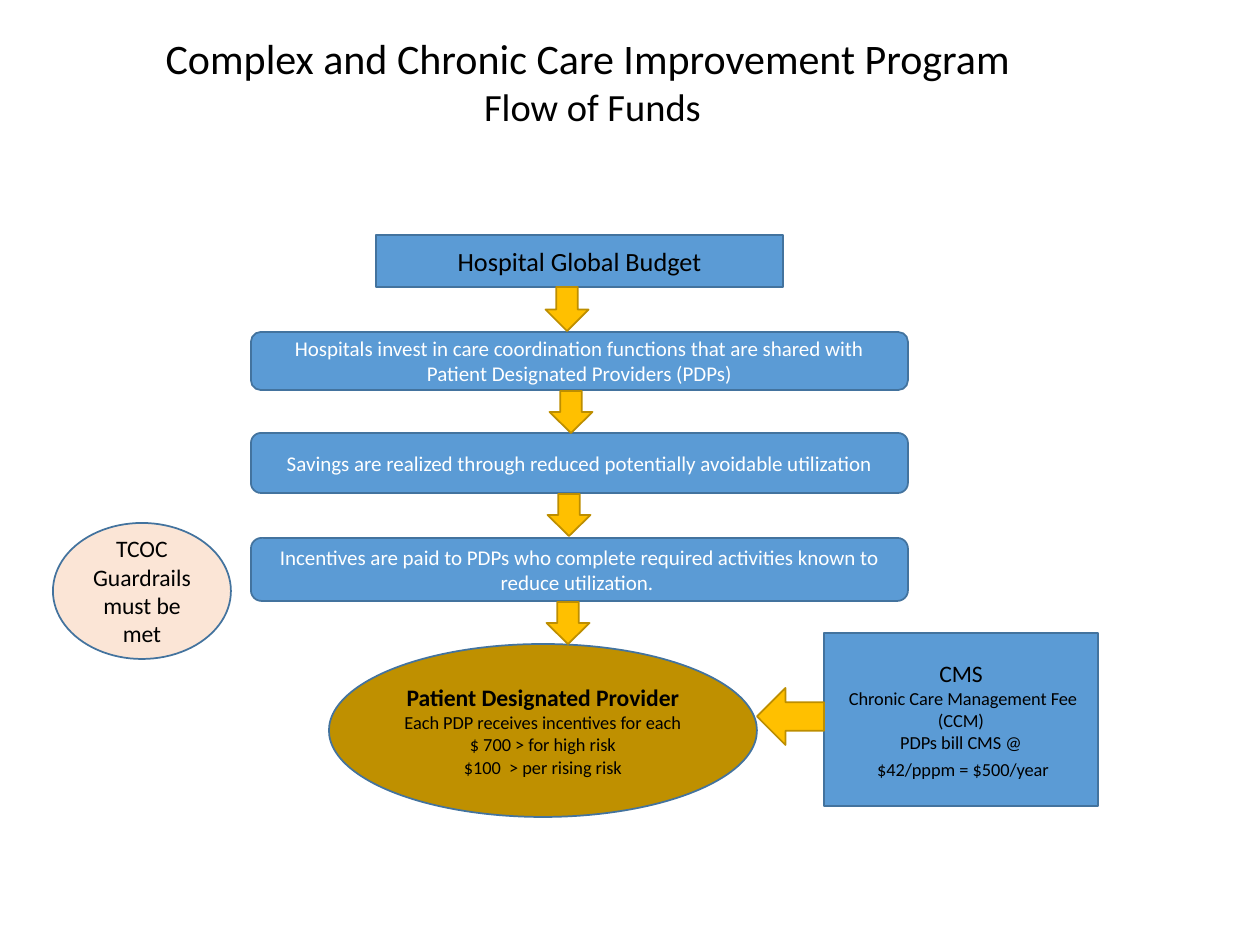
from pptx import Presentation
from pptx import util as u
from pptx.dml.color import RGBColor
from pptx.enum import shapes, text

KIND = shapes.MSO_SHAPE
SLIDE = (1260, 945)
THEME = {
    "font": "Calibri",
    "black": "000000", "white": "FFFFFF",
    "blue": "5B9BD5", "blue_edge": "43739E",
    "gold": "FFC000", "gold_edge": "BD8E00",
    "bronze": "BF9000", "peach": "FBE5D6",
    "title": 24, "subtitle": 22, "budget": 15, "heading": 13.5, "step": 12, "detail": 10.5,
}

TITLE_BOX = (140, 26, 905, 111)
TITLE = [("Complex and Chronic Care Improvement Program ", "title"),
         ("Flow of Funds", "subtitle")]

STEP_LEFT, STEP_WIDTH = 251, 657
STEPS = [
    (332, 58, "Hospitals invest in care coordination functions that are shared with "
              "Patient Designated Providers (PDPs)"),
    (433, 60, "Savings are realized through reduced potentially avoidable utilization"),
    (538, 63, "Incentives are paid to PDPs who complete required activities known to "
              "reduce utilization. "),
]

PARTIES = [
    (KIND.RECTANGLE, (376, 235, 407, 52), "blue", [("Hospital Global Budget", "budget")]),
    (KIND.OVAL, (329, 644, 428, 173), "bronze", [
        ("Patient Designated Provider", "heading", True),
        ("Each PDP receives incentives for each ", "detail"),
        ("$ 700 > for high risk", "detail"),
        ("$100  > per rising risk", "detail")]),
    (KIND.RECTANGLE, (824, 633, 274, 173), "blue", [
        ("CMS", "heading"),
        (" Chronic Care Management Fee (CCM)", "detail"),
        ("PDPs bill CMS @", "detail"),
        (" $42/pppm = $500/year", "detail", False, 3)]),
    (KIND.FLOWCHART_CONNECTOR, (53, 523, 178, 136), "peach",
     [("TCOC Guardrails must be met", "heading")]),
]

ARROW_WIDTH = 43
DOWN_ARROWS = [(567, 287, 44), (571, 391, 42), (569, 494, 42), (568, 602, 42)]
FEE_ARROW = (757, 688, 67, 57)


def px(length):
    return u.Emu(round(length * u.Inches(1) / 126))


def color(name):
    return RGBColor.from_string(THEME[name])


def write(frame, lines, ink):
    frame.word_wrap = True
    for index, (words, size, *extras) in enumerate(lines):
        bold, gap = (extras + [False, 0][len(extras):])
        paragraph = frame.paragraphs[0] if index == 0 else frame.add_paragraph()
        paragraph.text = words
        paragraph.alignment = text.PP_ALIGN.CENTER
        paragraph.space_before = u.Pt(gap)
        paragraph.font.name = THEME["font"]
        paragraph.font.size = u.Pt(THEME[size])
        paragraph.font.bold = bold
        paragraph.font.color.rgb = color(ink)


def draw(slide, kind, box, fill, edge, lines=(), ink="black"):
    part = slide.shapes.add_shape(kind, *map(px, box))
    part.shadow.inherit = False
    part.fill.solid()
    part.fill.fore_color.rgb = color(fill)
    part.line.color.rgb = color(edge)
    part.line.width = u.Pt(1)
    if lines:
        part.text_frame.vertical_anchor = text.MSO_ANCHOR.MIDDLE
        write(part.text_frame, lines, ink)


def main():
    deck = Presentation()
    deck.slide_width, deck.slide_height = map(px, SLIDE)
    slide = deck.slides.add_slide(deck.slide_layouts[5])

    title = slide.shapes.title
    title.left, title.top, title.width, title.height = map(px, TITLE_BOX)
    title.text_frame.vertical_anchor = text.MSO_ANCHOR.TOP
    title.text_frame.auto_size = text.MSO_AUTO_SIZE.NONE
    write(title.text_frame, TITLE, "black")

    for top, height, words in STEPS:
        draw(slide, KIND.ROUNDED_RECTANGLE, (STEP_LEFT, top, STEP_WIDTH, height),
             "blue", "blue_edge", [(words, "step")], "white")
    for kind, box, fill, lines in PARTIES:
        draw(slide, kind, box, fill, "blue_edge", lines)
    for center, top, height in DOWN_ARROWS:
        draw(slide, KIND.DOWN_ARROW, (center - ARROW_WIDTH / 2, top, ARROW_WIDTH, height),
             "gold", "gold_edge")
    draw(slide, KIND.LEFT_ARROW, FEE_ARROW, "gold", "gold_edge")

    deck.save("out.pptx")


if __name__ == "__main__":
    main()
